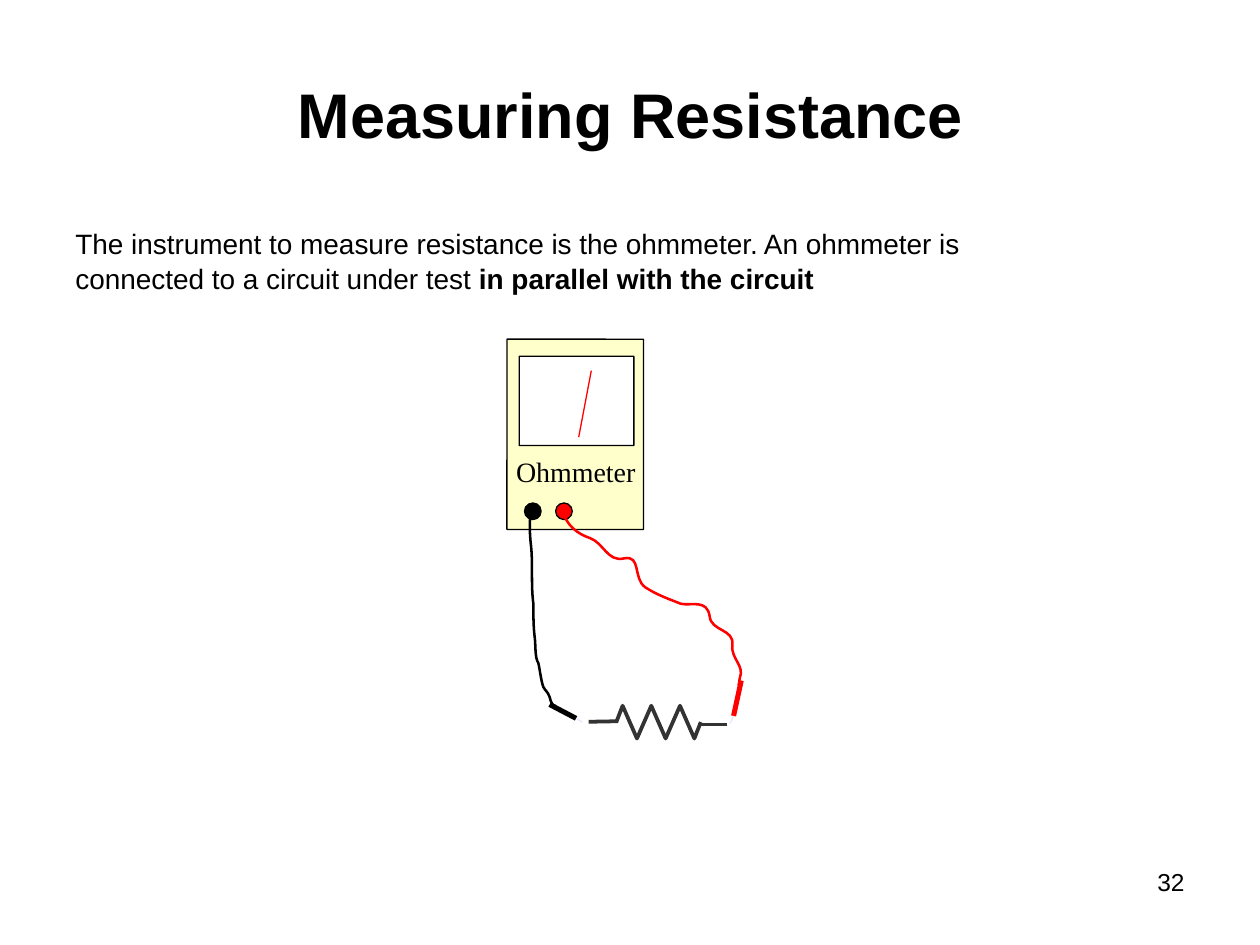
from lxml.etree import SubElement
from pptx import Presentation
from pptx.dml.color import RGBColor
from pptx.enum.shapes import MSO_CONNECTOR as Link, MSO_SHAPE as Kind
from pptx.enum.text import MSO_ANCHOR as Anchor, PP_ALIGN as Align
from pptx.oxml.ns import qn
from pptx.util import Pt

COLORS = {"ink": "000000", "red": "FF0000", "cream": "FFFFCC",
          "white": "FFFFFF", "tip": "E6E6FF", "gray": "333333"}

# Start point, then triples of Bezier points, relative to the meter's corner
RED_WIRE = [
    (32.3, 98.6),
    (33.8, 106.5), (41, 111.6), (47.5, 113.7),
    (55.4, 116.6), (57.5, 127.4), (66.9, 125.3),
    (77, 123.1), (71.9, 136.8), (79.1, 141.8),
    (85.6, 146.1), (92.1, 148.3), (99.3, 151.2),
    (105.1, 152.6), (114.4, 148.3), (115.9, 158.4),
    (116.6, 167), (130.3, 165.6), (128.8, 174.9),
    (128.1, 182.9), (136, 186.5), (133.1, 193.7)]
BLACK_WIRE = [
    (13.6, 97.9),
    (12.9, 103.7), (12.9, 110.9), (13.6, 116.6),
    (14.3, 122.4), (14.3, 128.1), (14.3, 133.2),
    (14.3, 139.7), (14.3, 145.4), (15.1, 151.2),
    (15.1, 157.7), (15.1, 164.1), (15.8, 169.9),
    (16.5, 174.2), (15.8, 182.1), (17.9, 185),
    (18.7, 187.9), (19.4, 195.1), (20.8, 198.7),
    (22.3, 201.6), (23, 200.9), (24.4, 204.5),
    (25.1, 208.1), (26.6, 209.5), (27.3, 209.5)]


def color(name):
    return RGBColor.from_string(COLORS[name])


def pen(shape, name, width):
    shape.line.color.rgb = color(name)
    shape.line.width = Pt(width)


def write(frame, paras, size=16, font="Arial", align=Align.LEFT,
          anchor=Anchor.TOP, pad=(0, 0), wrap=True, lead=None, before=0,
          hang=0):
    """Fill a frame; each paragraph is a list of (text, bold) runs."""
    frame.word_wrap, frame.vertical_anchor = wrap, anchor
    frame.margin_left = frame.margin_right = Pt(pad[0])
    frame.margin_top = frame.margin_bottom = Pt(pad[1])
    for i, runs in enumerate(paras):
        para = frame.add_paragraph() if i else frame.paragraphs[0]
        para.alignment, para.space_before = align, Pt(before)
        if lead:
            para.line_spacing = lead
        if hang:
            props = para._p.get_or_add_pPr()
            props.set("marL", str(Pt(hang)))
            props.set("indent", str(-Pt(hang)))
        for text, bold in runs:
            run = para.add_run()
            run.text = text
            run.font.name, run.font.size = font, Pt(size)
            run.font.bold = bold
            run.font.color.rgb = color("ink")


def add_text(slide, box, paras, **form):
    shape = slide.shapes.add_textbox(*map(Pt, box))
    write(shape.text_frame, paras, **form)


def add_shape(slide, kind, box, fill):
    shape = slide.shapes.add_shape(kind, *map(Pt, box))
    shape.shadow.inherit = False
    shape.fill.solid()
    shape.fill.fore_color.rgb = color(fill)
    pen(shape, "ink", 0.75)
    if kind == Kind.ROUNDED_RECTANGLE:
        shape.adjustments[0] = 0.002


def add_line(slide, x, y, start, end, name, width):
    ends = (x + start[0], y + start[1], x + end[0], y + end[1])
    line = slide.shapes.add_connector(Link.STRAIGHT, *map(Pt, ends))
    pen(line, name, width)
    SubElement(line._element.spPr, qn("a:effectLst"))


def add_path(slide, x, y, points, name, width):
    spots = [(Pt(x + px), Pt(y + py)) for px, py in points]
    build = slide.shapes.build_freeform(*spots[0])
    build.add_line_segments(spots[1:], close=False)
    shape = build.convert_to_shape()
    shape.shadow.inherit = False
    shape.fill.background()
    pen(shape, name, width)
    return shape


def bend(shape):
    """Turn each full triple of line segments into one Bezier segment."""
    lines = list(shape._element.iter(qn("a:lnTo")))
    for i in range(0, len(lines) - 2, 3):
        first, *rest = lines[i:i + 3]
        first.tag = qn("a:cubicBezTo")
        for line in rest:
            first.append(line[0])
            line.getparent().remove(line)


def meter(slide, x, y):
    add_shape(slide, Kind.ROUNDED_RECTANGLE, (x, y, 78, 108.7), "cream")
    add_shape(slide, Kind.ROUNDED_RECTANGLE,
              (x + 7, y + 9.8, 65.5, 51), "white")
    add_line(slide, x, y, (41, 56), (48.2, 18), "red", 0.75)
    for left, fill in ((27.8, "red"), (10, "ink")):
        add_shape(slide, Kind.OVAL, (x + left, y + 93.6, 9.5, 9.5), fill)
    add_text(slide, (x + 0.3, y + 66.2, 78, 19.5), [[("Ohmmeter", False)]],
             font="Times New Roman", align=Align.CENTER, wrap=False)


def probe(slide, x, y, grip, end, tip, name):
    add_line(slide, x, y, end, grip, name, 2.89)
    add_line(slide, x, y, end, tip, "tip", 0.71)


def wire(slide, x, y, knots, end, name):
    bend(add_path(slide, x, y, knots + [end], name, 1.45))


def resistor(slide, x, y, width, height):
    mid, peaks, gap = height / 2, 6, 8.2
    zigzag = [(15.8, mid)]
    zigzag += [(19.4 + gap * i, height * (i % 2)) for i in range(peaks)]
    zigzag.append((64.1, mid))
    add_path(slide, x, y, zigzag, "gray", 2.15)
    add_line(slide, x, y, (16.6, mid - 0.5), (0, mid - 0.2), "gray", 2.15)
    add_line(slide, x, y, (width, mid + 1.4), (62.6, mid + 1.4), "gray", 2.15)


def circuit(slide, x, y):
    meter(slide, x, y)
    probe(slide, x, y, (133.9, 195.1), (129.5, 215.3), (127.4, 219.6), "red")
    probe(slide, x, y, (24.4, 208.8), (39.5, 216.7), (43.1, 218.9), "ink")
    wire(slide, x, y, RED_WIRE, (132.4, 198), "red")
    wire(slide, x, y, BLACK_WIRE, (28, 209.5), "ink")
    resistor(slide, x + 46.7, y + 209.5, 79.2, 18.7)


def heading(slide, box):
    title = slide.shapes.title
    title.left, title.top, title.width, title.height = map(Pt, box)
    write(title.text_frame, [[("Measuring Resistance", True)]], size=36,
          align=Align.CENTER, anchor=Anchor.MIDDLE, lead=0.95)


def main():
    deck = Presentation()
    deck.slide_width, deck.slide_height = Pt(720), Pt(540)
    slide = deck.slides.add_slide(deck.slide_layouts[5])
    heading(slide, (36, 46, 648.7, 42))
    add_text(slide, (516, 492, 168, 37.5), [[("32", False)]], size=14,
             align=Align.RIGHT, pad=(7.2, 3.6))
    circuit(slide, 289.7, 193.8)
    add_text(slide, (36, 126, 648, 356), [
        [("The instrument to measure resistance is the ohmmeter. "
          "An ohmmeter is", False)],
        [("connected to a circuit under test ", False),
         ("in parallel with the circuit", True)],
    ], pad=(7.2, 3.6), before=0.6, hang=27)
    deck.save("out.pptx")


if __name__ == "__main__":
    main()
